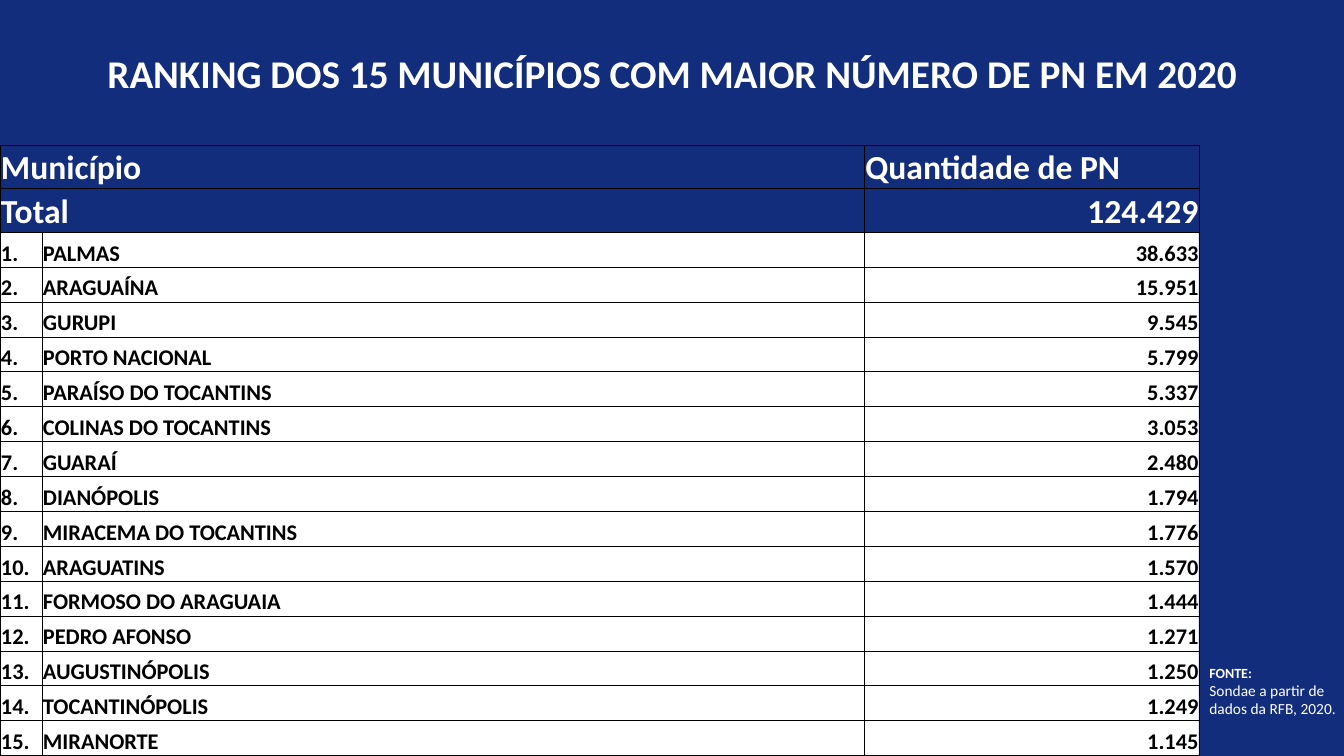
"""Slide ranking the 15 municipalities with the most small businesses in 2020."""
from dataclasses import dataclass

from lxml import etree
from pptx import Presentation
from pptx import util as u
from pptx.dml.color import RGBColor
from pptx.enum import shapes, text
from pptx.oxml.ns import qn


@dataclass(frozen=True)
class Theme:
    """Colours, font and type sizes in points."""
    navy: str = "132D7D"
    white: str = "FFFFFF"
    black: str = "000000"
    font: str = "Calibri"
    title: float = 28
    head: float = 24
    body: float = 16
    note: float = 11
    label: float = 10


WIDTH, HEIGHT, BAND = 960, 540, 103.7
COLUMNS = [30, 587.5, 239.3]
HEAD_ROW = 31.1
RANKING = [
    ("PALMAS", "38.633"),
    ("ARAGUAÍNA", "15.951"),
    ("GURUPI", "9.545"),
    ("PORTO NACIONAL", "5.799"),
    ("PARAÍSO DO TOCANTINS", "5.337"),
    ("COLINAS DO TOCANTINS", "3.053"),
    ("GUARAÍ", "2.480"),
    ("DIANÓPOLIS", "1.794"),
    ("MIRACEMA DO TOCANTINS", "1.776"),
    ("ARAGUATINS", "1.570"),
    ("FORMOSO DO ARAGUAIA", "1.444"),
    ("PEDRO AFONSO", "1.271"),
    ("AUGUSTINÓPOLIS", "1.250"),
    ("TOCANTINÓPOLIS", "1.249"),
    ("MIRANORTE", "1.145"),
]


def write(p, content, *, font, size, color, bold=True, align=text.PP_ALIGN.LEFT):
    """Add one formatted run to a paragraph."""
    p.alignment = align
    r = p.add_run()
    r.text = content
    r.font.name, r.font.size, r.font.bold = font, u.Pt(size), bold
    r.font.color.rgb = RGBColor.from_string(color)


class Deck:
    """Draws elements on the current slide in one style."""

    def __init__(self, theme):
        """Open a presentation with one blank slide."""
        self.t = theme
        self.prs = Presentation()
        self.prs.slide_width, self.prs.slide_height = u.Pt(WIDTH), u.Pt(HEIGHT)
        self.s = self.prs.slides.add_slide(self.prs.slide_layouts[6])

    def band(self, x, y, w, h, content=None):
        """Add a navy rectangle with an optional centred title."""
        sp = self.s.shapes.add_shape(shapes.MSO_SHAPE.RECTANGLE, *map(u.Pt, (x, y, w, h)))
        sp.shadow.inherit = False
        sp.fill.solid()
        sp.fill.fore_color.rgb = RGBColor.from_string(self.t.navy)
        sp.line.fill.background()
        if content:
            tf = sp.text_frame
            tf.vertical_anchor = text.MSO_ANCHOR.MIDDLE
            write(tf.paragraphs[0], content, font=self.t.font, size=self.t.title,
                  color=self.t.white, align=text.PP_ALIGN.CENTER)

    def note(self, x, y, w, h, label, content):
        """Add a bold label with a plain paragraph below it."""
        tf = self.s.shapes.add_textbox(*map(u.Pt, (x, y, w, h))).text_frame
        tf.word_wrap = True
        tf.auto_size = text.MSO_AUTO_SIZE.SHAPE_TO_FIT_TEXT
        write(tf.paragraphs[0], label, font=self.t.font, size=self.t.label, color=self.t.white)
        write(tf.add_paragraph(), content, font=self.t.font, size=self.t.note,
              color=self.t.white, bold=False)

    def border(self, cell):
        """Draw a thin black line on every side of a cell."""
        tc_pr = cell._tc.get_or_add_tcPr()
        for side in "LRTB":
            ln = etree.SubElement(tc_pr, qn(f"a:ln{side}"), w=str(u.Pt(0.5)))
            fill = etree.SubElement(ln, qn("a:solidFill"))
            etree.SubElement(fill, qn("a:srgbClr"), val=self.t.black)

    def cell(self, cell, content, is_head, align):
        """Format and fill one table cell."""
        self.border(cell)
        cell.margin_left = cell.margin_right = cell.margin_top = u.Pt(0.72)
        cell.margin_bottom = 0
        cell.vertical_anchor = text.MSO_ANCHOR.BOTTOM
        if is_head:
            cell.fill.solid()
            cell.fill.fore_color.rgb = RGBColor.from_string(self.t.navy)
        else:
            cell.fill.background()
        if content:
            write(cell.text_frame.paragraphs[0], content, font=self.t.font, align=align,
                  size=self.t.head if is_head else self.t.body,
                  color=self.t.white if is_head else self.t.black)

    def table(self, x, y, h, columns, heads, rows):
        """Add a table whose heading rows span the first two columns."""
        cells = [(name, "", value) for name, value in heads]
        cells += [(f"{i}.", name, value) for i, (name, value) in enumerate(rows, 1)]
        body_row = (h - HEAD_ROW * len(heads)) / len(rows)
        tbl = self.s.shapes.add_table(len(cells), len(columns), u.Pt(x), u.Pt(y),
                                      u.Pt(sum(columns)), u.Pt(h)).table
        tbl.first_row = tbl.horz_banding = False
        for column, w in zip(tbl.columns, columns):
            column.width = u.Pt(w)
        for i, row in enumerate(cells):
            is_head = i < len(heads)
            tbl.rows[i].height = u.Pt(HEAD_ROW if is_head else body_row)
            for j, content in enumerate(row):
                is_value = i > 0 and j == len(columns) - 1
                align = text.PP_ALIGN.RIGHT if is_value else text.PP_ALIGN.LEFT
                self.cell(tbl.cell(i, j), content, is_head, align)
            if is_head:
                tbl.cell(i, 0).merge(tbl.cell(i, 1))


def main():
    """Build the slide and save it."""
    deck = Deck(Theme())
    deck.band(WIDTH - BAND, 0, BAND, HEIGHT)
    deck.band(0, 0, WIDTH, BAND, "RANKING DOS 15 MUNICÍPIOS COM MAIOR NÚMERO DE PN EM 2020")
    deck.note(sum(COLUMNS), 470.9, 122.4, 46.1, "FONTE:",
              "Sondae a partir de dados da RFB, 2020.")
    deck.table(0, BAND, HEIGHT - BAND, COLUMNS,
               [("Município", "Quantidade de PN"), ("Total", "124.429")], RANKING)
    deck.prs.save("out.pptx")


if __name__ == "__main__":
    main()
